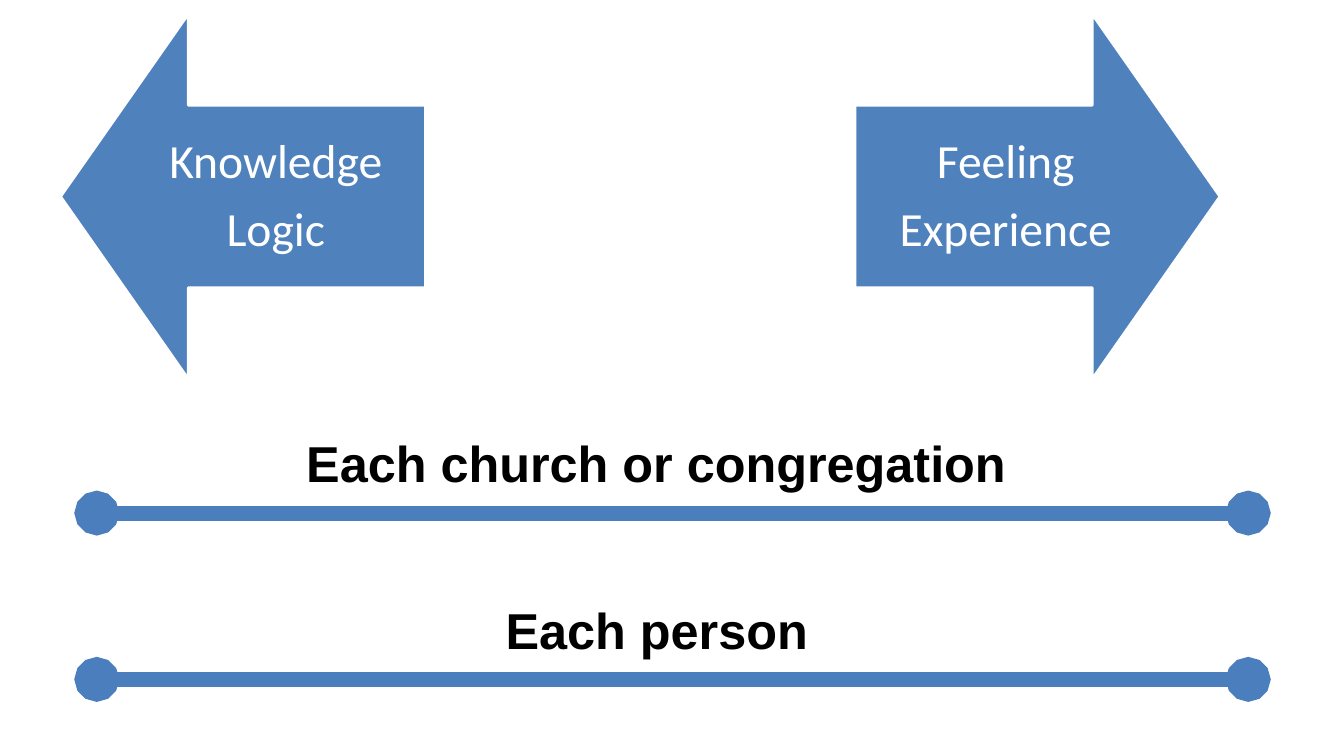
from dataclasses import dataclass

from lxml.etree import SubElement
from pptx import Presentation
from pptx.dml.color import RGBColor
from pptx.enum.shapes import MSO_CONNECTOR, MSO_SHAPE
from pptx.enum.text import MSO_ANCHOR, MSO_AUTO_SIZE, PP_ALIGN
from pptx.oxml.ns import qn
from pptx.slide import Slide
from pptx.util import Inches, Pt


@dataclass(frozen=True)
class Theme:
    arrow: RGBColor = RGBColor(0x4F, 0x81, 0xBD)
    span: RGBColor = RGBColor(0x4B, 0x7E, 0xBC)
    white: RGBColor = RGBColor(0xFF, 0xFF, 0xFF)
    black: RGBColor = RGBColor(0, 0, 0)
    arrow_font: str = "Calibri"
    label_font: str = "Arial"
    arrow_size: float = 34
    label_size: float = 36
    outline_width: float = 2
    span_width: float = 10.75


@dataclass(frozen=True)
class Pole:
    """One of the two opposing arrows, with its words."""
    words: tuple[str, ...]
    left: float
    text_left: float
    rotation: float


@dataclass(frozen=True)
class Scale:
    """A labelled line stretching between the two poles."""
    label: str
    line_y: float
    label_left: float
    label_width: float


THEME = Theme()
ARROW_TOP, ARROW_SIDE = 0.14, 3.62
WORDS_TOP, WORDS_WIDTH, WORDS_HEIGHT, WORDS_INSET = 1.05, 2.99, 1.81, 0.26
SCALE_LEFT, SCALE_RIGHT = 0.96, 12.38
LABEL_RISE, LABEL_HEIGHT = 0.85, 0.71

POLES = (
    Pole(("Knowledge", "Logic"), 0.6, 1.24, 270),
    Pole(("Feeling", "Experience"), 8.48, 8.48, 90),
)
SCALES = (
    Scale("Each person", 6.74, 3.6, 5.83),
    Scale("Each church or congregation", 5.09, 2.89, 7.24),
)


def add_text(page: Slide, lines: tuple[str, ...], *, left: float, top: float,
             width: float, height: float, font: str, size: float,
             color: RGBColor, bold: bool = False, inset: float | None = None,
             anchor: MSO_ANCHOR = MSO_ANCHOR.TOP, line_spacing: float = 1.0,
             space_after: float = 0,
             auto_size: MSO_AUTO_SIZE = MSO_AUTO_SIZE.NONE) -> None:
    box = page.shapes.add_textbox(Inches(left), Inches(top), Inches(width), Inches(height))
    frame = box.text_frame
    frame.word_wrap = True
    frame.auto_size = auto_size
    frame.vertical_anchor = anchor
    if inset is not None:
        frame.margin_left = frame.margin_right = Inches(inset)
        frame.margin_top = frame.margin_bottom = Inches(inset)
    for index, line in enumerate(lines):
        para = frame.add_paragraph() if index else frame.paragraphs[0]
        para.alignment = PP_ALIGN.CENTER
        para.line_spacing = line_spacing
        para.space_after = Pt(space_after)
        span = para.add_run()
        span.text = line
        span.font.name = font
        span.font.size = Pt(size)
        span.font.bold = bold
        span.font.color.rgb = color


def add_pole(page: Slide, pole: Pole) -> None:
    arrow = page.shapes.add_shape(MSO_SHAPE.UP_ARROW, Inches(pole.left), Inches(ARROW_TOP),
                                  Inches(ARROW_SIDE), Inches(ARROW_SIDE))
    arrow.adjustments[0] = 0.5
    arrow.adjustments[1] = 0.35
    arrow.rotation = pole.rotation
    arrow.shadow.inherit = False
    arrow.fill.solid()
    arrow.fill.fore_color.rgb = THEME.arrow
    arrow.line.color.rgb = THEME.white
    arrow.line.width = Pt(THEME.outline_width)
    add_text(page, pole.words, left=pole.text_left, top=WORDS_TOP, width=WORDS_WIDTH,
             height=WORDS_HEIGHT, font=THEME.arrow_font, size=THEME.arrow_size,
             color=THEME.white, inset=WORDS_INSET, anchor=MSO_ANCHOR.MIDDLE,
             line_spacing=0.9, space_after=12)


def add_scale_line(page: Slide, scale: Scale) -> None:
    line = page.shapes.add_connector(MSO_CONNECTOR.STRAIGHT, Inches(SCALE_LEFT),
                                     Inches(scale.line_y), Inches(SCALE_RIGHT),
                                     Inches(scale.line_y))
    line.line.color.rgb = THEME.span
    line.line.width = Pt(THEME.span_width)
    properties = line.element.spPr
    outline = properties.find(qn("a:ln"))
    for end in ("a:headEnd", "a:tailEnd"):
        SubElement(outline, qn(end), type="oval")
    SubElement(properties, qn("a:effectLst"))


def add_scale_label(page: Slide, scale: Scale) -> None:
    add_text(page, (scale.label,), left=scale.label_left, top=scale.line_y - LABEL_RISE,
             width=scale.label_width, height=LABEL_HEIGHT, font=THEME.label_font,
             size=THEME.label_size, color=THEME.black, bold=True,
             auto_size=MSO_AUTO_SIZE.SHAPE_TO_FIT_TEXT)


def main() -> None:
    deck = Presentation()
    deck.slide_width, deck.slide_height = Inches(13.33), Inches(7.5)
    page = deck.slides.add_slide(deck.slide_layouts[6])
    for pole in POLES:
        add_pole(page, pole)
    for scale in SCALES:
        add_scale_line(page, scale)
    for scale in SCALES:
        add_scale_label(page, scale)
    deck.save("out.pptx")


if __name__ == "__main__":
    main()
